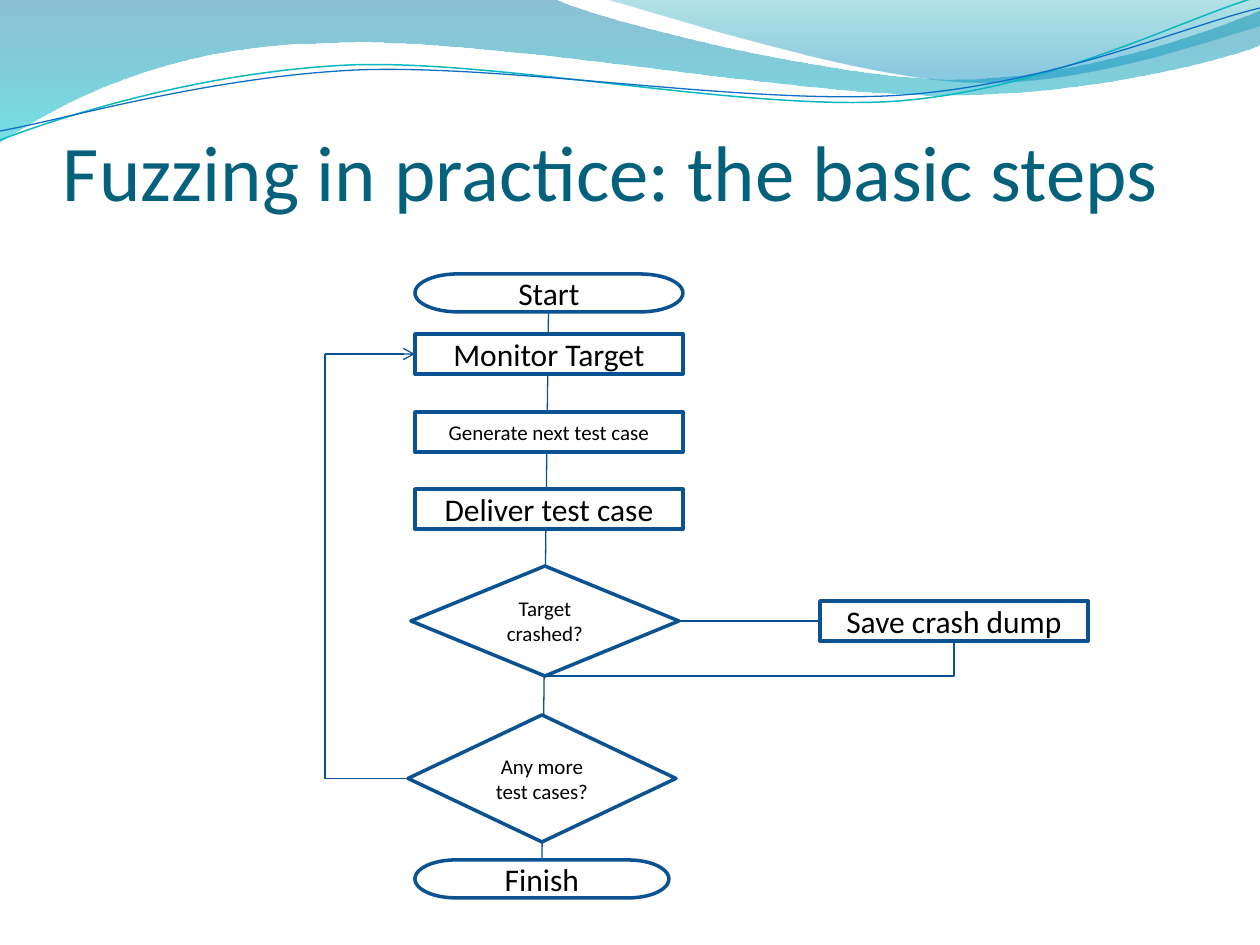
from itertools import chain

from lxml import etree
from pptx import Presentation, util as u
from pptx.dml.color import RGBColor
from pptx.enum import shapes, text
from pptx.oxml.ns import qn

PX = 914400 // 126
FONT = "Calibri"
COLORS = {"title": "04617B", "text": "000000", "box": "FFFFFF",
          "outline": "0B5292", "link": "095295"}
TITLE = "Fuzzing in practice: the basic steps"

# Header waves: start point, then segments of one point (line) or three (curve)
BANDS = [
    ((0, 0), [[(554, -1)],
              [(600, 21), (837, 79), (955, 79)],
              [(1075, 79), (1207, 33), (1260, 11)],
              [(1261, 45)],
              [(1239, 55), (1096, 96), (940, 95)],
              [(784, 95), (481, 35), (324, 43)],
              [(163, 45), (58, 105), (-1, 142)]],
     [(0, "0074A1", 45), (1, "00C6CF", 55)]),
    ((604, -1), [[(658, 14), (859, 78), (969, 82)],
                 [(1079, 87), (1211, 40), (1260, 26)],
                 [(1260, 0)]],
     [(0, "00A1A9", 30), (0.8, "008BBF", 45)]),
]
STRANDS = [
    ((0, 140), [[(60, 117), (199, 72), (349, 65)],
                [(498, 59), (747, 112), (898, 101)],
                [(1050, 89), (1182, 19), (1257, -3)]], "0AB8BF", 0.85),
    ((0, 131), [[(59, 121), (207, 77), (357, 70)],
                [(508, 64), (752, 106), (903, 95)],
                [(1053, 84), (1185, 26), (1260, 8)]], "0F6FC6", 0.75),
]

# Flowchart steps: name, kind, left, top, width, height, text size
STEPS = [
    ("Monitor Target", "PROCESS", 415, 334, 268, 40, 18),
    ("Generate next test case", "PROCESS", 415, 412, 268, 40, 12),
    ("Deliver test case", "PROCESS", 415, 489, 268, 40, 18),
    ("Target crashed?", "DECISION", 411, 566, 268, 110, 12),
    ("Save crash dump", "PROCESS", 820, 601, 268, 40, 18),
    ("Any more test cases?", "DECISION", 408, 715, 268, 127, 12),
    ("Finish", "TERMINATOR", 415, 860, 254, 38, 18),
    ("Start", "TERMINATOR", 415, 274, 268, 38, 18),
]
TOP, LEFT, BOTTOM, RIGHT = range(4)
LOOP_X, LOOP_Y = 325, 354


def rgb(value):
    return RGBColor.from_string(value)


def add_wave(slide, start, segments, close):
    """Lay all points as lines, then join each group of three into a curve."""
    builder = slide.shapes.build_freeform(*start, scale=PX)
    builder.add_line_segments(chain.from_iterable(segments), close=close)
    wave = builder.convert_to_shape()
    wave.shadow.inherit = False
    lines = iter(list(wave._element.iter(qn("a:lnTo"))))
    for segment in segments:
        group = [next(lines) for _ in segment]
        if len(group) == 3:
            curve = etree.Element(qn("a:cubicBezTo"))
            group[0].addprevious(curve)
            for line in group:
                curve.append(line[0])
                line.getparent().remove(line)
    return wave


def add_band(slide, start, segments, stops):
    band = add_wave(slide, start, segments, True)
    band.line.fill.background()
    band.fill.gradient()
    band.fill.gradient_angle = 270
    for stop, (position, color, _) in zip(band.fill.gradient_stops, stops):
        stop.position = position
        stop.color.rgb = rgb(color)
    for node, (_, _, opacity) in zip(band._element.iter(qn("a:srgbClr")), stops):
        etree.SubElement(node, qn("a:alpha"), val=str(opacity * 1000))


def add_strand(slide, start, segments, color, width):
    strand = add_wave(slide, start, segments, False)
    strand.fill.background()
    strand.line.color.rgb = rgb(color)
    strand.line.width = u.Pt(width)


def write(frame, words, size, color, align):
    frame.word_wrap = True
    para = frame.paragraphs[0]
    para.alignment = align
    span = para.add_run()
    span.text = words
    span.font.name, span.font.size = FONT, u.Pt(size)
    span.font.color.rgb = rgb(color)


def add_step(slide, name, kind, left, top, width, height, size):
    preset = getattr(shapes.MSO_SHAPE, "FLOWCHART_" + kind)
    box = slide.shapes.add_shape(preset, *(v * PX for v in (left, top, width, height)))
    box.shadow.inherit = False
    box.fill.solid()
    box.fill.fore_color.rgb = rgb(COLORS["box"])
    box.line.color.rgb = rgb(COLORS["outline"])
    box.line.width = u.Pt(2)
    box.text_frame.vertical_anchor = text.MSO_ANCHOR.MIDDLE
    write(box.text_frame, name, size, COLORS["text"], text.PP_ALIGN.CENTER)
    return box


def add_link(slide, start, end, bent=False):
    kind = shapes.MSO_CONNECTOR.ELBOW if bent else shapes.MSO_CONNECTOR.STRAIGHT
    link = slide.shapes.add_connector(kind, *(v * PX for v in (*start, *end)))
    link.line.color.rgb = rgb(COLORS["link"])
    link.line.width = u.Pt(0.75)
    etree.SubElement(link._element.spPr, qn("a:effectLst"))
    if bent:  # one corner: across first, then up
        link._element.spPr.find(qn("a:prstGeom")).set("prst", "bentConnector2")
    return link


def main():
    deck = Presentation()
    deck.slide_width, deck.slide_height = u.Inches(10), u.Inches(7.5)
    slide = deck.slides.add_slide(deck.slide_layouts[6])

    # Header waves
    for band in BANDS:
        add_band(slide, *band)
    for strand in STRANDS:
        add_strand(slide, *strand)

    # Main line runs behind the steps
    spine = add_link(slide, (549, 274), (542, 860))

    # Title
    title = slide.shapes.add_textbox(*(v * PX for v in (63, 60, 1134, 157))).text_frame
    title.margin_left = title.margin_right = title.margin_bottom = 0
    title.vertical_anchor = text.MSO_ANCHOR.BOTTOM
    write(title, TITLE, 45, COLORS["title"], text.PP_ALIGN.LEFT)

    # Steps
    boxes = {step[0]: add_step(slide, *step) for step in STEPS}
    crashed, dump = boxes["Target crashed?"], boxes["Save crash dump"]
    spine.begin_connect(boxes["Start"], TOP)
    spine.end_connect(boxes["Finish"], TOP)

    # Crash branch and its way back
    branch = add_link(slide, (679, 621), (820, 621))
    branch.begin_connect(crashed, RIGHT)
    branch.end_connect(dump, LEFT)
    back = add_link(slide, (545, 676), (954, 641), bent=True)
    back.begin_connect(crashed, BOTTOM)
    back.end_connect(dump, BOTTOM)

    # Loop to the monitor step
    loop = add_link(slide, (408, 779), (LOOP_X, LOOP_Y), bent=True)
    loop.begin_connect(boxes["Any more test cases?"], LEFT)
    arrow = add_link(slide, (LOOP_X, LOOP_Y), (415, LOOP_Y))
    arrow.end_connect(boxes["Monitor Target"], LEFT)
    etree.SubElement(arrow.line._get_or_add_ln(), qn("a:tailEnd"), type="arrow")

    deck.save("out.pptx")


if __name__ == "__main__":
    main()
